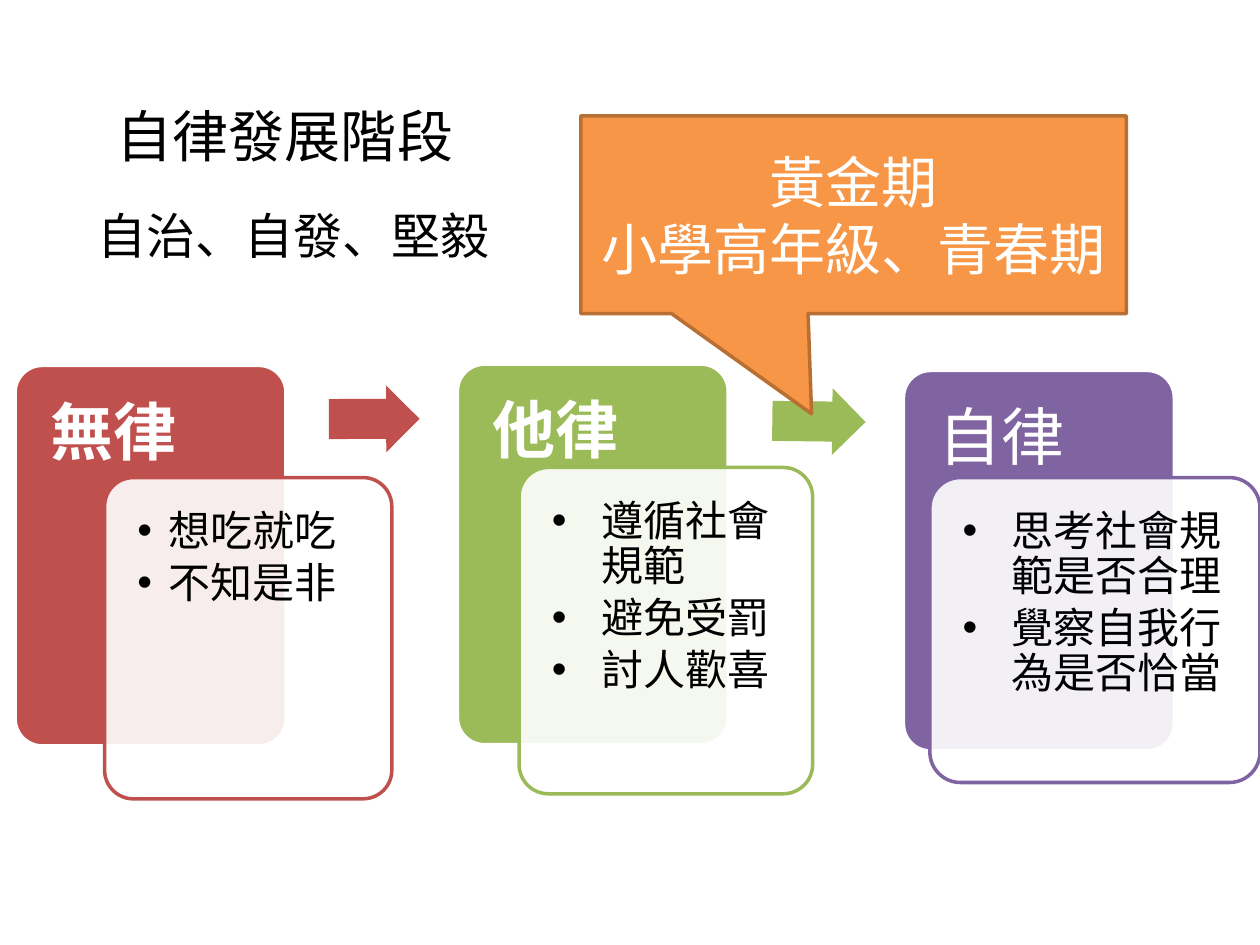
from dataclasses import dataclass

import pptx
import pptx.dml.color
import pptx.enum.shapes
import pptx.enum.text
import pptx.oxml
import pptx.oxml.ns
import pptx.util
from lxml import etree

Inches, Pt = pptx.util.Inches, pptx.util.Pt
MSO_SHAPE = pptx.enum.shapes.MSO_SHAPE
PP_ALIGN = pptx.enum.text.PP_ALIGN
MSO_ANCHOR = pptx.enum.text.MSO_ANCHOR
qn = pptx.oxml.ns.qn


@dataclass(frozen=True)
class Theme:
    font: str = "Noto Sans CJK SC"
    white: str = "FFFFFF"
    black: str = "000000"
    red: str = "C0504D"
    green: str = "9BBB59"
    purple: str = "8064A2"
    orange: str = "F79646"
    orange_edge: str = "B76F34"
    stage_size: int = 36
    title_size: int = 32
    subtitle_size: int = 28
    bullet_size: int = 24
    line_width: int = 2


THEME = Theme()


def rgb(value):
    return pptx.dml.color.RGBColor.from_string(value)


def add_shape(s, kind, box, fill, line=None, adjustments=()):
    sp = s.shapes.add_shape(kind, *map(Inches, box))
    sp.shadow.inherit = False
    sp.fill.solid()
    sp.fill.fore_color.rgb = rgb(fill)
    if line:
        sp.line.color.rgb = rgb(line)
        sp.line.width = Pt(THEME.line_width)
    else:
        sp.line.fill.background()
    for i, value in enumerate(adjustments):
        sp.adjustments[i] = value
    return sp


def format_runs(p, size, color, bold=False):
    for r in p.runs:
        r.font.size = Pt(size)
        r.font.bold = bold
        r.font.color.rgb = rgb(color)
        r.font.name = THEME.font
        ea = etree.SubElement(r.font._element, qn("a:ea"))
        ea.set("typeface", THEME.font)


def add_text_box(s, box, margins=(0.1, 0.05, 0.1, 0.05)):
    """Add a wrapping text box; margins run left, top, right, bottom."""
    tf = s.shapes.add_textbox(*map(Inches, box)).text_frame
    tf.word_wrap = True
    (tf.margin_left, tf.margin_top,
     tf.margin_right, tf.margin_bottom) = map(Inches, margins)
    return tf


def add_bullet(p, indent):
    pPr = p._p.get_or_add_pPr()
    pPr.set("marL", str(Inches(indent)))
    pPr.set("indent", str(-Inches(indent)))
    etree.SubElement(pPr, qn("a:buFont")).set("typeface", "Arial")
    etree.SubElement(pPr, qn("a:buChar")).set("char", "•")


def add_stage(s, left, top, color, name, bold, panel, bullets, indent):
    """Add a coloured card and its bullet panel, given relative to the card."""
    width, height, header_height, pad = 2.15, 3.02, 0.86, 0.07
    add_shape(s, MSO_SHAPE.ROUNDED_RECTANGLE, (left, top, width, height),
              color, THEME.white, [0.1])
    tf = add_text_box(s, (left, top, width, header_height),
                      (0.28, 0.28, 0.28, 0.15))
    p = tf.paragraphs[0]
    p.text = name
    p.line_spacing = 0.9
    format_runs(p, THEME.stage_size, THEME.white, bold)

    dx, dy, w, h = panel
    x, y = left + dx, top + dy
    sp = add_shape(s, MSO_SHAPE.ROUNDED_RECTANGLE, (x, y, w, h),
                   THEME.white, color, [0.1])
    fill_color = sp._element.spPr.find(qn("a:solidFill"))[0]
    etree.SubElement(fill_color, qn("a:alpha")).set("val", "90000")
    tf = add_text_box(s, (x + pad, y + pad, w - 2 * pad, h - 2 * pad), (0.19,) * 4)
    tf.text = "\n".join(bullets)
    for p in tf.paragraphs:
        p.line_spacing = 0.9
        p.space_after = Pt(3.6)
        add_bullet(p, indent)
        format_runs(p, THEME.bullet_size, THEME.black)


def add_arrow(s, box, color, rotation):
    sp = add_shape(s, MSO_SHAPE.RIGHT_ARROW, box, color, adjustments=[0.6, 0.5])
    sp.rotation = rotation


def add_callout(s, box, text):
    sp = add_shape(s, MSO_SHAPE.RECTANGULAR_CALLOUT, box, THEME.orange,
                   THEME.orange_edge, [-0.077, 1.006])
    tf = sp.text_frame
    tf.word_wrap = True
    tf.vertical_anchor = MSO_ANCHOR.MIDDLE
    p = tf.paragraphs[0]
    p.text = text
    p.alignment = PP_ALIGN.CENTER
    format_runs(p, THEME.title_size, THEME.white)


def add_heading(s, box, text, size, alignment):
    p = add_text_box(s, box).paragraphs[0]
    p.text = text
    p.alignment = alignment
    format_runs(p, size, THEME.black)


def main():
    prs = pptx.Presentation()
    prs.slide_width, prs.slide_height = Inches(10), Inches(7.5)
    s = prs.slides.add_slide(prs.slide_layouts[6])

    add_stage(s, 0.12, 2.9, THEME.red, "無律", True, (0.71, 0.89, 2.28, 2.55),
              ["想吃就吃", "不知是非"], 0.25)
    add_arrow(s, (2.61, 3.06, 0.72, 0.53), THEME.red, 359.8)
    add_stage(s, 3.63, 2.89, THEME.green, "他律", True, (0.49, 0.82, 2.33, 2.59),
              ["遵循社會規範", "避免受罰", "討人歡喜"], 0.39)
    add_arrow(s, (6.13, 3.08, 0.74, 0.53), THEME.green, 0.7)
    add_stage(s, 7.17, 2.94, THEME.purple, "自律", False, (0.21, 0.85, 2.62, 2.42),
              ["思考社會規範是否合理", "覺察自我行為是否恰當"], 0.39)

    add_callout(s, (4.61, 0.92, 4.33, 1.57), "黃金期\v小學高年級、青春期")
    add_heading(s, (0.83, 0.76, 3.07, 0.64), "自律發展階段",
                THEME.title_size, PP_ALIGN.LEFT)
    add_heading(s, (0.6, 1.58, 3.46, 0.57), "自治、自發、堅毅",
                THEME.subtitle_size, PP_ALIGN.CENTER)
    prs.save("out.pptx")


if __name__ == "__main__":
    main()
